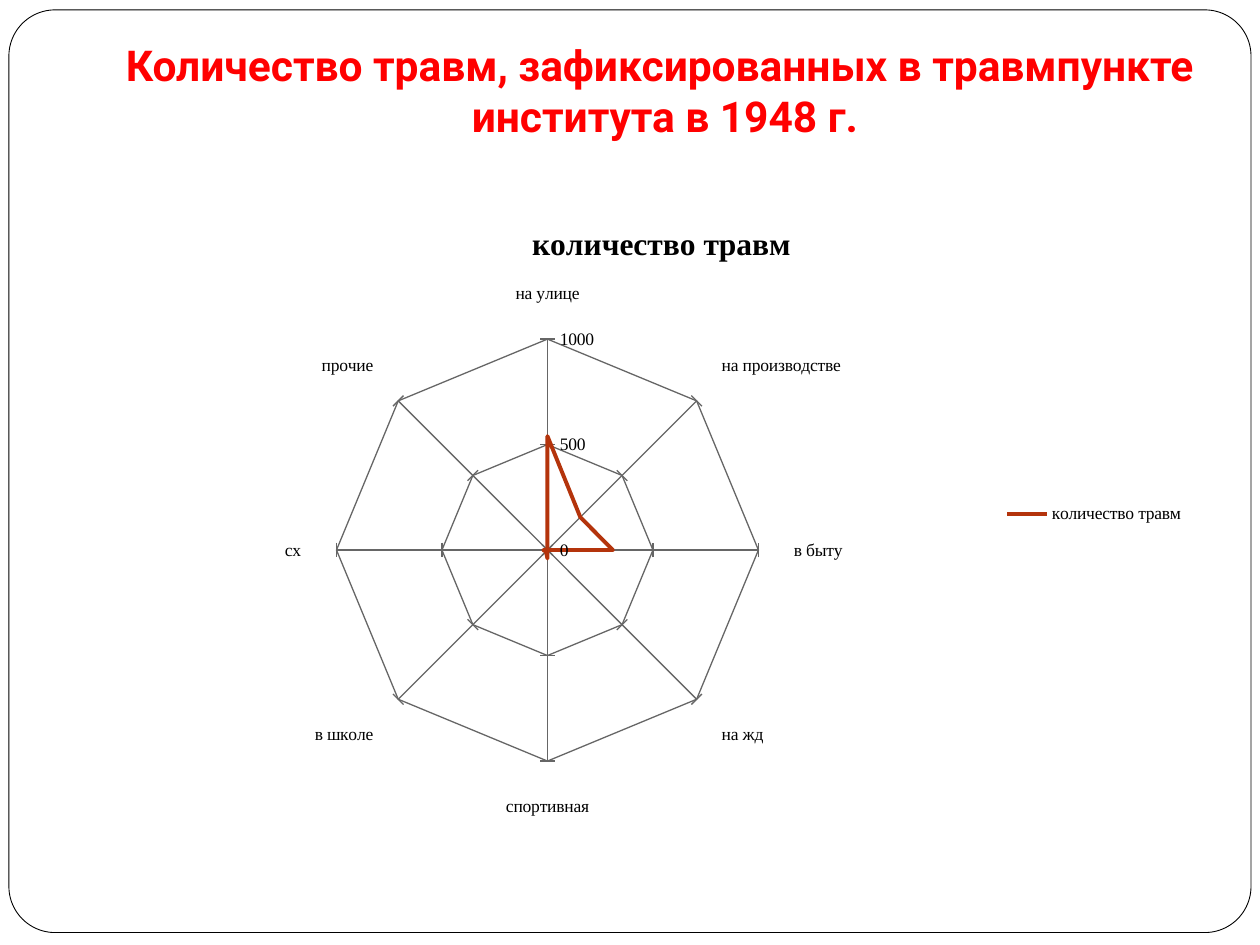
from dataclasses import dataclass

from pptx import Presentation
from pptx.chart.data import CategoryChartData
from pptx.dml.color import RGBColor
from pptx.enum.chart import XL_CHART_TYPE as ChartType
from pptx.enum.chart import XL_LEGEND_POSITION as LegendPos
from pptx.enum.chart import XL_MARKER_STYLE as Marker
from pptx.enum.chart import XL_TICK_MARK as Tick
from pptx.enum.shapes import MSO_SHAPE as Shape
from pptx.enum.text import MSO_ANCHOR as Anchor
from pptx.enum.text import MSO_AUTO_SIZE as AutoSize
from pptx.enum.text import PP_ALIGN as Align
from pptx.util import Cm, Pt


@dataclass(frozen=True)
class Theme:
    paper: RGBColor = RGBColor(0xFF, 0xFF, 0xFF)
    ink: RGBColor = RGBColor(0, 0, 0)
    heading: RGBColor = RGBColor(0xFF, 0, 0)
    grid: RGBColor = RGBColor(0x66, 0x66, 0x66)
    series: RGBColor = RGBColor(0xB4, 0x34, 0x0C)
    heading_font: str = "Roboto"
    chart_font: str = "Times New Roman"
    heading_size: float = 24.3
    chart_title_size: float = 18
    label_size: float = 10


@dataclass(frozen=True)
class Box:
    left: float
    top: float
    width: float
    height: float

    def lengths(self) -> tuple:
        return Cm(self.left), Cm(self.top), Cm(self.width), Cm(self.height)


THEME = Theme()
FRAME = Box(0.18, 0.2, 25.04, 18.6)
TITLE = Box(1.2, 0.76, 24.2, 3.81)
CHART = Box(2.54, 4.01, 21.59, 12.7)

SERIES_NAME = "количество травм"
INJURIES = {
    "на улице": 540,
    "на производстве": 220,
    "в быту": 310,
    "на жд": 0,
    "спортивная": 40,
    "в школе": 10,
    "сх": 20,
    "прочие": 0,
}


def set_font(font, *, name: str, size: float, color: RGBColor, bold: bool = False) -> None:
    font.name, font.size, font.bold = name, Pt(size), bold
    font.color.rgb = color


def write(tf, text: str, *, align: Align = Align.CENTER, **style) -> None:
    """Fill the first paragraph; a newline in the text becomes a line break."""
    p = tf.paragraphs[0]
    p.alignment = align
    for i, line in enumerate(text.split("\n")):
        if i:
            p.add_line_break()
        r = p.add_run()
        r.text = line
        set_font(r.font, **style)


def add_frame(slide) -> None:
    sp = slide.shapes.add_shape(Shape.ROUNDED_RECTANGLE, *FRAME.lengths())
    sp.adjustments[0] = 0.05
    sp.shadow.inherit = False
    sp.fill.solid()
    sp.fill.fore_color.rgb = THEME.paper
    sp.line.color.rgb = THEME.ink
    sp.line.width = Pt(0.5)


def set_title(slide) -> None:
    sp = slide.shapes.title
    sp.left, sp.top, sp.width, sp.height = TITLE.lengths()
    tf = sp.text_frame
    tf.word_wrap = True
    tf.auto_size = AutoSize.NONE
    tf.vertical_anchor = Anchor.TOP
    tf.margin_top = Cm(0.02)
    write(tf, "Количество травм, зафиксированных в травмпункте\n института в 1948 г.",
          name=THEME.heading_font, size=THEME.heading_size,
          color=THEME.heading, bold=True)


def style_axis(axis, tick: Tick) -> None:
    axis.has_major_gridlines = True
    axis.major_tick_mark = tick
    axis.minor_tick_mark = Tick.NONE
    for line in (axis.format.line, axis.major_gridlines.format.line):
        line.color.rgb = THEME.grid
        line.width = Pt(0.75)


def add_radar(slide) -> None:
    data = CategoryChartData()
    data.categories = list(INJURIES)
    data.add_series(SERIES_NAME, list(INJURIES.values()))
    chart = slide.shapes.add_chart(ChartType.RADAR, *CHART.lengths(), data).chart
    set_font(chart.font, name=THEME.chart_font, size=THEME.label_size, color=THEME.ink)

    chart.has_title = True
    write(chart.chart_title.text_frame, SERIES_NAME, name=THEME.chart_font,
          size=THEME.chart_title_size, color=THEME.ink, bold=True)
    chart.chart_title.include_in_layout = False
    chart.has_legend = True
    chart.legend.position = LegendPos.RIGHT
    chart.legend.include_in_layout = False

    style_axis(chart.category_axis, Tick.OUTSIDE)
    values = chart.value_axis
    style_axis(values, Tick.CROSS)
    values.minimum_scale, values.maximum_scale, values.major_unit = 0, 1000, 500

    plot = chart.plots[0]
    plot.vary_by_categories = False
    ser = plot.series[0]
    ser.smooth = False
    ser.marker.style = Marker.NONE
    ser.format.line.color.rgb = THEME.series
    ser.format.line.width = Pt(2.25)


def main() -> None:
    prs = Presentation()
    prs.slide_width, prs.slide_height = Cm(25.4), Cm(19.05)
    slide = prs.slides.add_slide(prs.slide_layouts[5])
    add_frame(slide)
    title = slide.shapes.title.element
    title.getparent().append(title)  # bring the title in front of the frame
    set_title(slide)
    add_radar(slide)
    prs.save("out.pptx")


if __name__ == "__main__":
    main()
